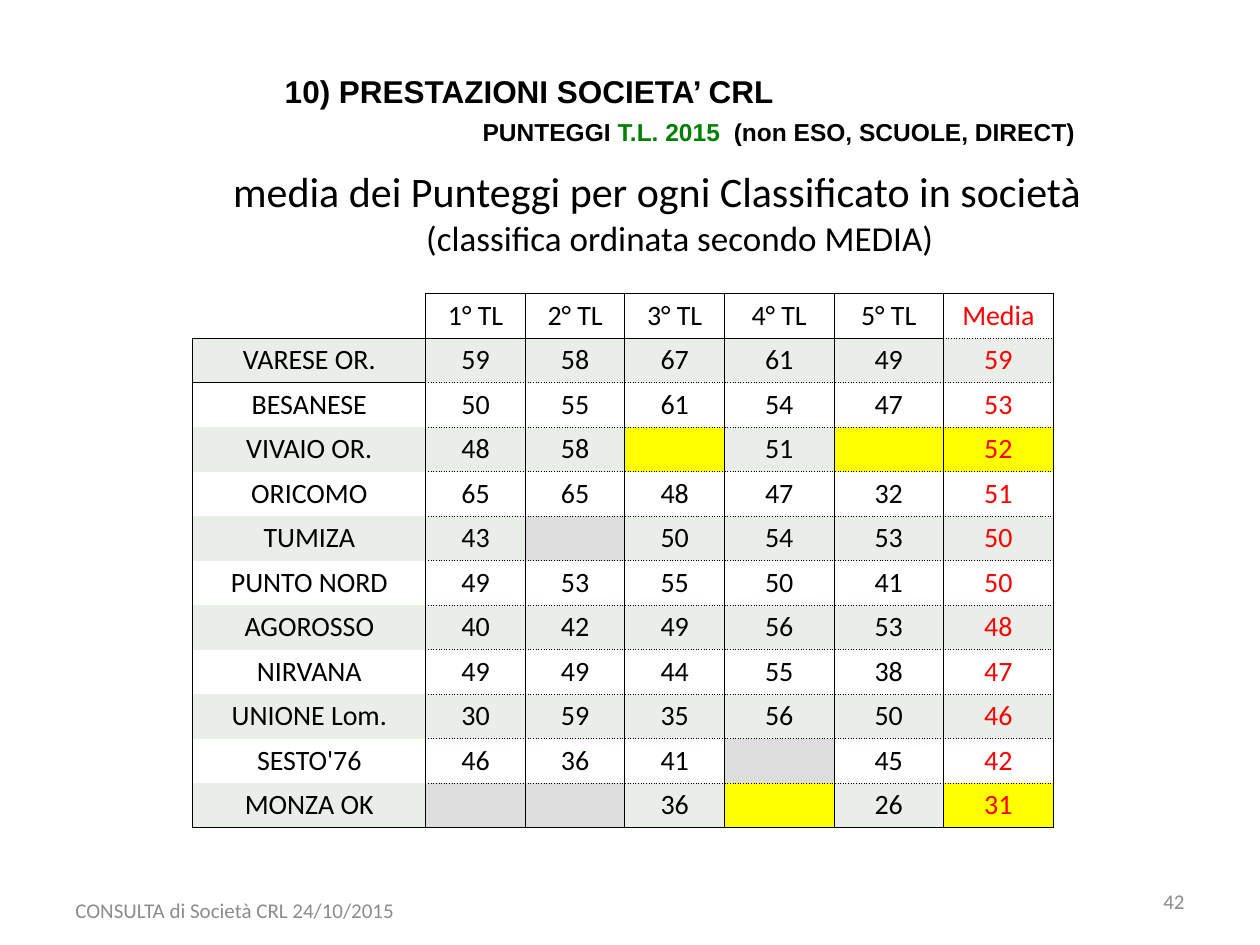
from lxml import etree
from pptx import Presentation
from pptx.dml.color import RGBColor
from pptx.enum.text import MSO_ANCHOR, MSO_AUTO_SIZE, PP_ALIGN
from pptx.oxml.ns import qn
from pptx.util import Inches, Pt

LEFT, CENTER, RIGHT = PP_ALIGN.LEFT, PP_ALIGN.CENTER, PP_ALIGN.RIGHT
TOP, MIDDLE = MSO_ANCHOR.TOP, MSO_ANCHOR.MIDDLE
NO_FIT = MSO_AUTO_SIZE.NONE
PLAIN_STYLE = "{2D5ABB26-0587-4C30-8999-92F81FD0307C}"
BLACK, RED, GREEN, MUTED = "000000", "FF0000", "008000", "8C8C8C"
BAND, YELLOW, GRAY = "E9EFE8", "FFFF00", "DDDDDD"

HEADER = ["", "1° TL", "2° TL", "3° TL", "4° TL", "5° TL", "Media"]
SCORES = [
    ["VARESE OR.", 59, 58, 67, 61, 49, 59],
    ["BESANESE", 50, 55, 61, 54, 47, 53],
    ["VIVAIO OR.", 48, 58, "", 51, "", 52],
    ["ORICOMO", 65, 65, 48, 47, 32, 51],
    ["TUMIZA", 43, "", 50, 54, 53, 50],
    ["PUNTO NORD", 49, 53, 55, 50, 41, 50],
    ["AGOROSSO", 40, 42, 49, 56, 53, 48],
    ["NIRVANA", 49, 49, 44, 55, 38, 47],
    ["UNIONE Lom.", 30, 59, 35, 56, 50, 46],
    ["SESTO'76", 46, 36, 41, "", 45, 42],
    ["MONZA OK", "", "", 36, "", 26, 31],
]
YELLOW_CELLS = {(3, 3), (3, 5), (3, 6), (11, 4), (11, 6)}


def rgb(color):
    return RGBColor.from_string(color)


def add_run(p, text, size, color=BLACK, font="Calibri", bold=False):
    r = p.add_run()
    r.text = text
    r.font.size = Pt(size)
    r.font.name = font
    r.font.bold = bold
    r.font.color.rgb = rgb(color)


def add_title(s):
    sp = s.shapes.title
    sp.left, sp.top, sp.width, sp.height = map(Inches, (2.16, 0.52, 7.09, 0.71))
    tf = sp.text_frame
    tf.auto_size = NO_FIT
    tf.vertical_anchor = TOP
    lines = [
        (0, [("10) PRESTAZIONI SOCIETA’ CRL", 18, BLACK)]),
        (1.57, [("PUNTEGGI ", 14, BLACK), ("T.L. 2015  ", 14, GREEN),
                ("(non ESO, SCUOLE, DIRECT)", 14, BLACK)]),
    ]
    for i, (indent, runs) in enumerate(lines):
        p = tf.add_paragraph() if i else tf.paragraphs[0]
        p.alignment = LEFT
        p.space_before = Pt(4)
        p._p.get_or_add_pPr().set("marL", str(Inches(indent)))
        for text, size, color in runs:
            add_run(p, text, size, color, "Arial", True)


def add_footer(s, text, left, width, height, align):
    sp = s.shapes.add_textbox(*map(Inches, (left, 6.95, width, height)))
    tf = sp.text_frame
    tf.word_wrap = True
    tf.vertical_anchor = MIDDLE
    p = tf.paragraphs[0]
    p.alignment = align
    add_run(p, text, 12, MUTED)


def add_plain_table(s, left, top, widths, height, rows):
    frame = s.shapes.add_table(rows, len(widths), *map(Inches, (left, top, sum(widths), height)))
    table = frame.table
    table.first_row = table.horz_banding = False
    table._tbl.tblPr.find(qn("a:tableStyleId")).text = PLAIN_STYLE
    for col, width in zip(table.columns, widths):
        col.width = Inches(width)
    for cell in table.iter_cells():
        cell.margin_left = cell.margin_right = cell.margin_top = cell.margin_bottom = 0
        cell.vertical_anchor = MIDDLE
        cell.fill.background()
    return table


def set_borders(cell, borders):
    tcPr = cell._tc.get_or_add_tcPr()
    for i, (side, dash) in enumerate(borders):
        ln = etree.Element(qn("a:ln" + side), w=str(Pt(0.5)))
        fill = etree.SubElement(ln, qn("a:solidFill"))
        etree.SubElement(fill, qn("a:srgbClr"), val=BLACK)
        etree.SubElement(ln, qn("a:prstDash"), val=dash)
        tcPr.insert(i, ln)


def horizontal_line(edge, col, last):
    if edge == 0:
        return "solid" if col else None
    if edge == last:
        return "solid"
    if edge == 1:
        return "dot" if col == 6 else "solid"
    return "dot" if col else None


def cell_fill(row, col, value):
    if (row, col) in YELLOW_CELLS:
        return YELLOW
    if row and value == "":
        return GRAY
    return BAND if row % 2 else None


def add_subtitle(s):
    cell = add_plain_table(s, 1.85, 1.23, [7.09], 0.94, 1).cell(0, 0)
    tf = cell.text_frame
    add_run(tf.paragraphs[0], "media dei Punteggi per ogni Classificato in società", 24)
    p = tf.add_paragraph()
    p.alignment = CENTER
    add_run(p, "(classifica ordinata secondo MEDIA)", 20)


def add_scores(s):
    data = [HEADER] + SCORES
    last = len(data)
    table = add_plain_table(s, 1.53, 2.33, [1.85] + [0.79] * 3 + [0.87] * 3, 4.24, last)
    for row, values in enumerate(data):
        for col, value in enumerate(values):
            cell = table.cell(row, col)
            p = cell.text_frame.paragraphs[0]
            p.alignment = CENTER
            if value != "":
                add_run(p, str(value), 16, RED if col == 6 else BLACK)
            fill = cell_fill(row, col, value)
            if fill:
                cell.fill.solid()
                cell.fill.fore_color.rgb = rgb(fill)
            borders = [("L", "solid" if row or col else None), ("R", "solid"),
                       ("T", horizontal_line(row, col, last)),
                       ("B", horizontal_line(row + 1, col, last))]
            set_borders(cell, [b for b in borders if b[1]])


def main():
    prs = Presentation()
    prs.slide_width, prs.slide_height = Inches(10), Inches(7.5)
    s = prs.slides.add_slide(prs.slide_layouts[5])
    add_footer(s, "42", 7.17, 2.33, 0.4, RIGHT)
    add_footer(s, "CONSULTA di Società CRL 24/10/2015", 0.5, 3.56, 0.55, LEFT)
    add_title(s)
    add_subtitle(s)
    add_scores(s)
    prs.save("out.pptx")


if __name__ == "__main__":
    main()
